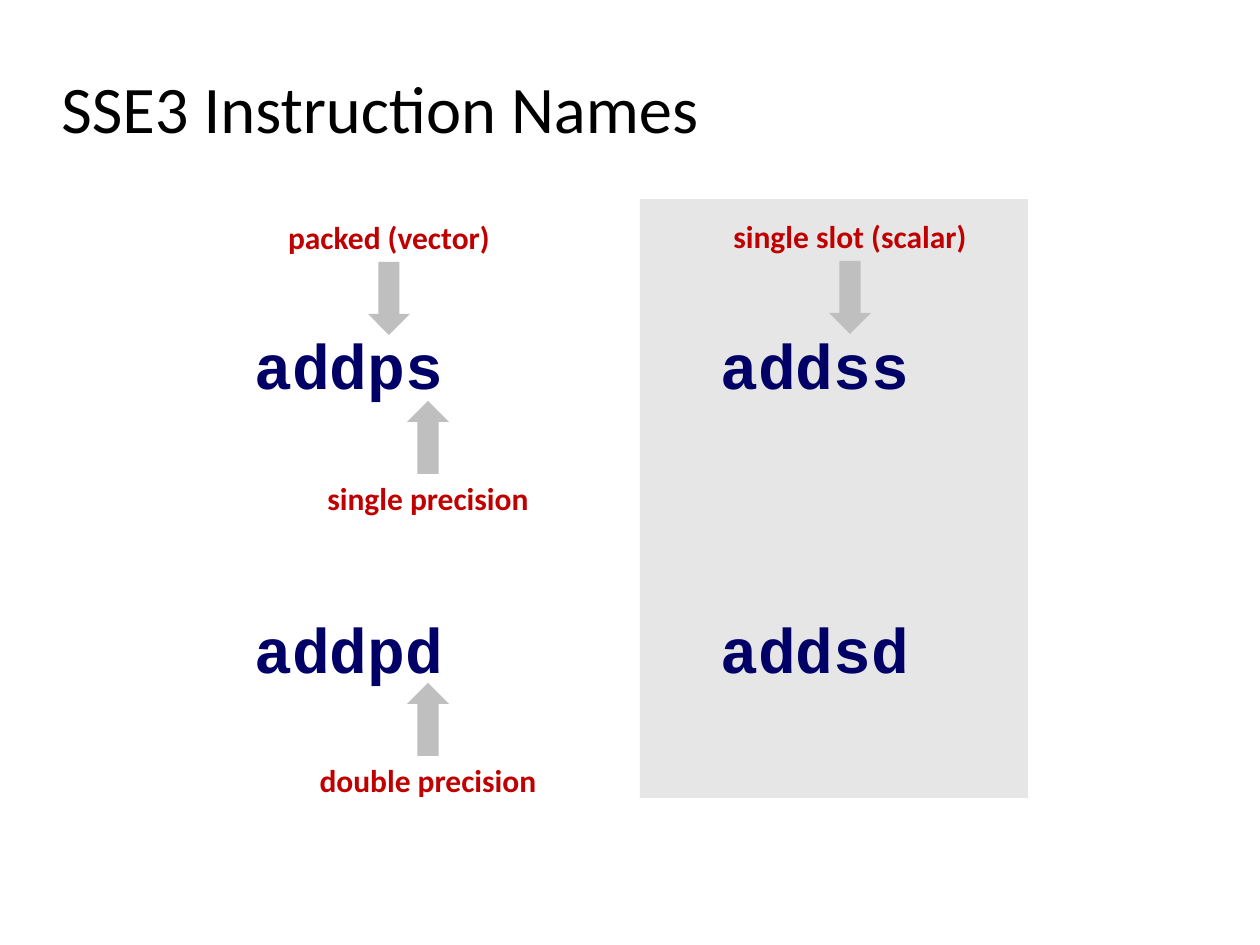
from pptx import Presentation
from pptx.dml.color import RGBColor
from pptx.enum.shapes import MSO_SHAPE as SHAPE
from pptx.enum.text import MSO_ANCHOR as ANCHOR, MSO_AUTO_SIZE as AUTO, PP_ALIGN as ALIGN
from pptx.util import Emu, Pt

COLORS = {"title": "000000", "code": "000066", "label": "C00000",
          "arrow": "BFBFBF", "panel": "E6E6E6"}

TITLE = "SSE3 Instruction Names"
INSTRUCTIONS = [["addps", "addss"], ["addpd", "addsd"]]
# text, centre x, arrow top, label width, arrow direction
NOTES = [
    ("packed (vector)", 389, 262, 231, "down"),
    ("single slot (scalar)", 850, 261, 273, "down"),
    ("single precision", 428, 401, 231, "up"),
    ("double precision", 428, 683, 257, "up"),
]

PANEL = (640, 199, 388, 599)
TITLE_BOX = (49, 60, 1046, 105)
CODE_X, CODE_Y, CODE_DX, CODE_DY = 242, 320, 466, 284
CODE_W, TEXT_H = 214, 88
ARROW_W, ARROW_H = 42, 73
LABEL_SHIFT = {"down": -50, "up": 72}  # label top relative to arrow top
ARROWS = {"down": SHAPE.DOWN_ARROW, "up": SHAPE.UP_ARROW}


def px(n):
    return Emu(round(n * 914400 / 126))


def add_filled(slide, kind, box, color):
    sp = slide.shapes.add_shape(kind, *map(px, box))
    sp.shadow.inherit = False
    sp.fill.solid()
    sp.fill.fore_color.rgb = RGBColor.from_string(COLORS[color])
    sp.line.fill.background()


def add_text(slide, text, box, font, size, color, bold=True, wrap=True, align=ALIGN.LEFT):
    tf = slide.shapes.add_textbox(*map(px, box)).text_frame
    tf.word_wrap = wrap
    tf.auto_size = AUTO.SHAPE_TO_FIT_TEXT
    tf.text = text
    p = tf.paragraphs[0]
    p.alignment = align
    r = p.runs[0]
    r.font.name, r.font.size, r.font.bold = font, Pt(size), bold
    r.font.color.rgb = RGBColor.from_string(COLORS[color])
    return tf


prs = Presentation()
prs.slide_width, prs.slide_height = px(1260), px(945)
slide = prs.slides.add_slide(prs.slide_layouts[6])

add_filled(slide, SHAPE.RECTANGLE, PANEL, "panel")

title = add_text(slide, TITLE, TITLE_BOX, "Calibri", 38, "title", bold=False)
title.auto_size = AUTO.NONE
title.vertical_anchor = ANCHOR.MIDDLE
title.paragraphs[0].line_spacing = 0.87

for row, names in enumerate(INSTRUCTIONS):
    for col, name in enumerate(names):
        box = (CODE_X + col * CODE_DX, CODE_Y + row * CODE_DY, CODE_W, TEXT_H)
        add_text(slide, name, box, "Courier New", 36, "code", wrap=False)

for text, center, top, width, direction in NOTES:
    arrow_box = (center - ARROW_W / 2, top, ARROW_W, ARROW_H)
    add_filled(slide, ARROWS[direction], arrow_box, "arrow")
    label_box = (center - width / 2, top + LABEL_SHIFT[direction], width, TEXT_H)
    add_text(slide, text, label_box, "Calibri", 18, "label", align=ALIGN.CENTER)

prs.save("out.pptx")
